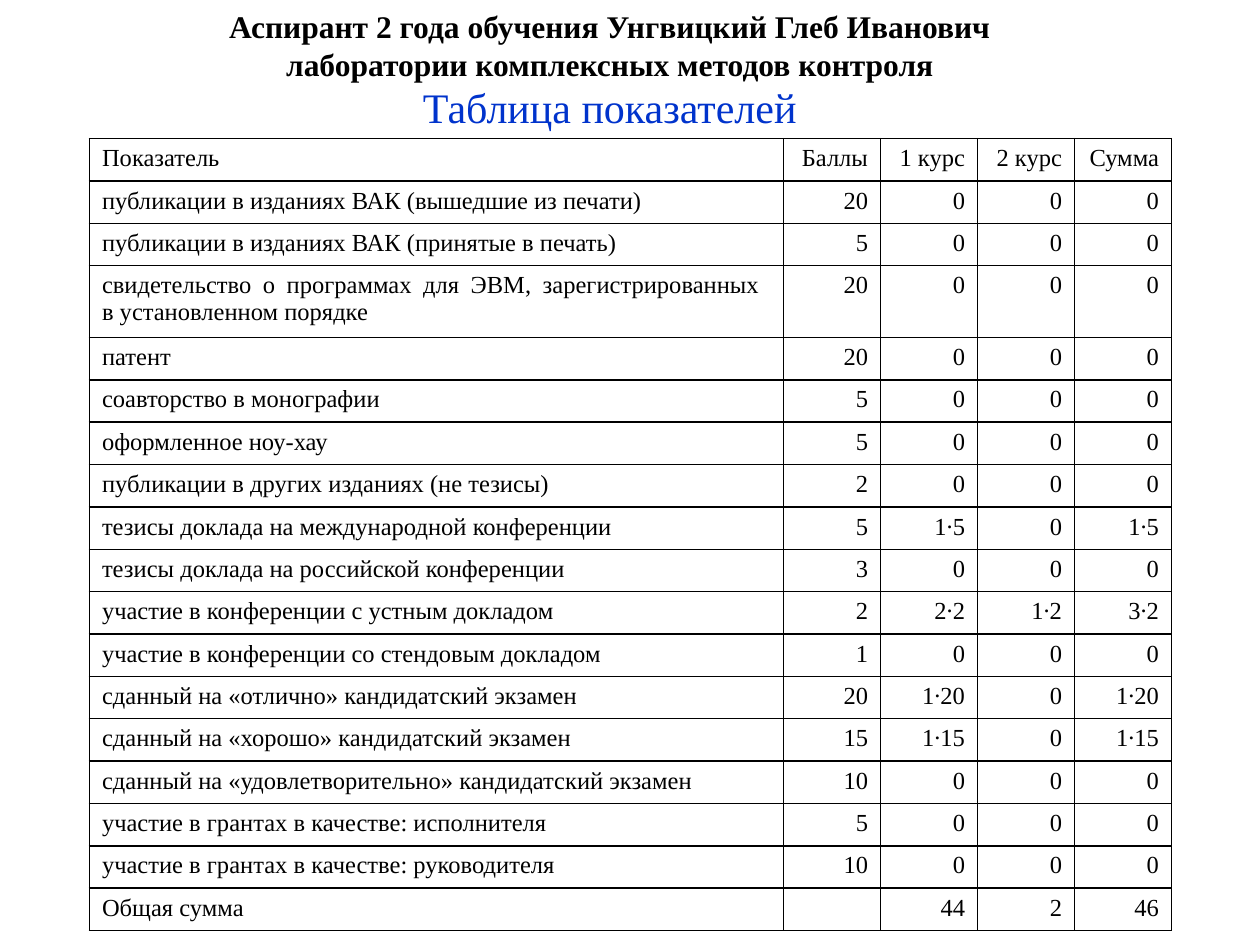
import pptx
import pptx.dml.color
import pptx.enum.text
import pptx.oxml
import pptx.oxml.ns
import pptx.util

FONT = "Times New Roman"
BLACK, BLUE = "000000", "0033CC"
ALIGN = pptx.enum.text.PP_ALIGN
ANCHOR = pptx.enum.text.MSO_ANCHOR
inch = pptx.util.Inches

SLIDE_W, SLIDE_H = 10, 7.5
TABLE_LEFT, TABLE_TOP, TABLE_H = 0.71, 1.1, 6.29
INDICATOR_W, SCORE_W = 5.51, 0.77
TWO_LINE_H = 0.57

HEADING = ("Аспирант 2 года обучения Унгвицкий Глеб Иванович\n"
           "лаборатории комплексных методов контроля")

# Indicator, points, year 1, year 2, sum
SCORES = [
    ("Показатель", "Баллы", "1 курс", "2 курс", "Сумма"),
    ("публикации в изданиях ВАК (вышедшие из печати)", "20", "0", "0", "0"),
    ("публикации в изданиях ВАК (принятые в печать)", "5", "0", "0", "0"),
    ("свидетельство о программах для ЭВМ, зарегистрированных \n"
     "в установленном порядке", "20", "0", "0", "0"),
    ("патент", "20", "0", "0", "0"),
    ("соавторство в монографии", "5", "0", "0", "0"),
    ("оформленное ноу-хау", "5", "0", "0", "0"),
    ("публикации в других изданиях (не тезисы)", "2", "0", "0", "0"),
    ("тезисы доклада на международной конференции", "5", "1∙5", "0", "1∙5"),
    ("тезисы доклада на российской конференции", "3", "0", "0", "0"),
    ("участие в конференции с устным докладом", "2", "2∙2", "1∙2", "3∙2"),
    ("участие в конференции со стендовым докладом", "1", "0", "0", "0"),
    ("сданный на «отлично» кандидатский экзамен", "20", "1∙20", "0", "1∙20"),
    ("сданный на «хорошо» кандидатский экзамен", "15", "1∙15", "0", "1∙15"),
    ("сданный на «удовлетворительно» кандидатский экзамен", "10", "0", "0", "0"),
    ("участие в грантах в качестве: исполнителя", "5", "0", "0", "0"),
    ("участие в грантах в качестве: руководителя", "10", "0", "0", "0"),
    ("Общая сумма", "", "44", "2", "46"),
]


def rgb(value):
    return pptx.dml.color.RGBColor.from_string(value)


def write(paragraph, text, size, color=BLACK, bold=False, align=ALIGN.CENTER):
    """Add one run per line, with line breaks between them."""
    paragraph.alignment = align
    for index, line in enumerate(text.split("\n")):
        if index:
            paragraph.add_line_break()
        run = paragraph.add_run()
        run.text = line
        run.font.name = FONT
        run.font.size = pptx.util.Pt(size)
        run.font.bold = bold
        run.font.color.rgb = rgb(color)


def add_caption(slide, box, text, size, anchor, **style):
    caption = slide.shapes.add_textbox(*map(inch, box)).text_frame
    caption.word_wrap = True
    caption.vertical_anchor = anchor
    write(caption.paragraphs[0], text, size, **style)
    return caption.paragraphs[0]


def set_borders(cell, color=BLACK, width=1):
    properties = cell._tc.get_or_add_tcPr()
    for index, side in enumerate(("lnL", "lnR", "lnT", "lnB")):
        properties.insert(index, pptx.oxml.parse_xml(
            f'<a:{side} {pptx.oxml.ns.nsdecls("a")} w="{pptx.util.Pt(width)}">'
            f'<a:solidFill><a:srgbClr val="{color}"/></a:solidFill></a:{side}>'))


def fill_cell(cell, text, size, align):
    cell.margin_left = cell.margin_right = inch(0.1)
    cell.margin_top = cell.margin_bottom = inch(0.05)
    cell.fill.background()
    set_borders(cell)
    paragraph = cell.text_frame.paragraphs[0]
    if text:
        write(paragraph, text, size, align=align)
    else:
        # An empty cell must not force its row taller than the others
        paragraph._p.append(pptx.oxml.parse_xml(
            f'<a:endParaRPr {pptx.oxml.ns.nsdecls("a")} sz="{size * 100}"/>'))


def add_scores(slide, rows):
    columns = [INDICATOR_W] + [SCORE_W] * (len(rows[0]) - 1)
    tall = sum("\n" in row[0] for row in rows)
    row_h = (TABLE_H - tall * TWO_LINE_H) / (len(rows) - tall)
    table = slide.shapes.add_table(
        len(rows), len(columns), inch(TABLE_LEFT), inch(TABLE_TOP),
        inch(sum(columns)), inch(TABLE_H)).table
    table.first_row = table.horz_banding = False
    for column, width in zip(table.columns, columns):
        column.width = inch(width)
    for r, row in enumerate(rows):
        table.rows[r].height = inch(TWO_LINE_H if "\n" in row[0] else row_h)
        for c, text in enumerate(row):
            align = ALIGN.RIGHT if c else ALIGN.JUSTIFY
            fill_cell(table.cell(r, c), text, 14, align)


def main():
    deck = pptx.Presentation()
    deck.slide_width, deck.slide_height = inch(SLIDE_W), inch(SLIDE_H)
    slide = deck.slides.add_slide(deck.slide_layouts[6])

    # Heading and table caption
    add_caption(slide, (0.59, 0, 8.5, 0.71), HEADING, 18, ANCHOR.MIDDLE, bold=True)
    subtitle = add_caption(slide, (1.34, 0.6, 7, 0.47), "Таблица показателей",
                           24, ANCHOR.TOP, color=BLUE)
    subtitle.space_before = pptx.util.Pt(0.2 * 24)

    # Score table
    add_scores(slide, SCORES)
    deck.save("out.pptx")


if __name__ == "__main__":
    main()
